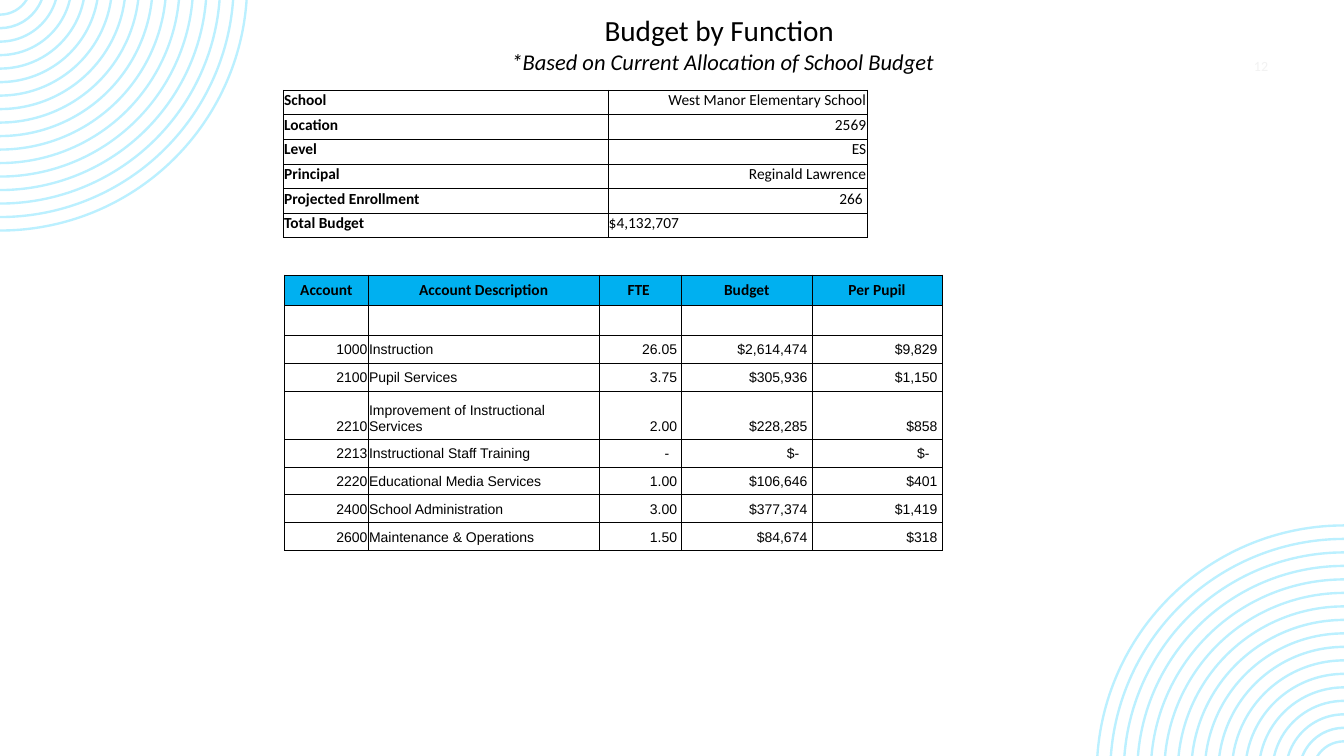
import math

from lxml import etree
from pptx import Presentation
from pptx import util as u
from pptx.dml.color import RGBColor
from pptx.enum import text
from pptx.oxml import ns

BLACK = RGBColor(0x00, 0x00, 0x00)
HEADER_BLUE = RGBColor(0x00, 0xB0, 0xF0)
RING_BLUE = RGBColor(0xBB, 0xF0, 0xFF)
PALE_GREY = RGBColor(0xF2, 0xF2, 0xF2)

SLIDE_W, SLIDE_H = 33.87, 19.05
RINGS_W, RINGS_H = 6.25, 5.84
NO_STYLE = "{2D5ABB26-0587-4C30-8999-92F81FD0307C}"
LEFT, CENTER, RIGHT = text.PP_ALIGN.LEFT, text.PP_ALIGN.CENTER, text.PP_ALIGN.RIGHT
TOP, MIDDLE, BOTTOM = (text.MSO_ANCHOR.TOP, text.MSO_ANCHOR.MIDDLE,
                       text.MSO_ANCHOR.BOTTOM)

SCHOOL_FACTS = [
    ("School", "West Manor Elementary School"),
    ("Location", "2569"),
    ("Level", "ES"),
    ("Principal", "Reginald Lawrence"),
    ("Projected Enrollment", "266 "),
    ("Total Budget", "$4,132,707"),
]
BUDGET_HEADINGS = ("Account", "Account Description", "FTE ", "Budget", "Per Pupil")
BUDGET_LINES = [
    ("1000", "Instruction", "26.05 ", "$2,614,474 ", "$9,829 "),
    ("2100", "Pupil Services", "3.75 ", "$305,936 ", "$1,150 "),
    ("2210", "Improvement of Instructional Services", "2.00 ", "$228,285 ", "$858 "),
    ("2213", "Instructional Staff Training", "- ", "$- ", "$- "),
    ("2220", "Educational Media Services", "1.00 ", "$106,646 ", "$401 "),
    ("2400", "School Administration", "3.00 ", "$377,374 ", "$1,419 "),
    ("2600", "Maintenance & Operations", "1.50 ", "$84,674 ", "$318 "),
]


def style(paragraph, size, font="Calibri", color=BLACK, bold=False, italic=False):
    for run in paragraph.runs:
        run.font.size, run.font.name = u.Pt(size), font
        run.font.bold, run.font.italic = bold, italic
        run.font.color.rgb = color


def add_point(path, kind, x, y):
    step = etree.SubElement(path, ns.qn("a:" + kind))
    etree.SubElement(step, ns.qn("a:pt"), x=str(u.Cm(x)), y=str(u.Cm(y)))


def add_arc(path, radius, start, sweep):
    etree.SubElement(path, ns.qn("a:arcTo"), wR=str(u.Cm(radius)), hR=str(u.Cm(radius)),
                     stAng=str(round(start * 60000)), swAng=str(round(sweep * 60000)))


def add_rings(slide, left, top, rotation):
    """Concentric bands, their centre just beyond the slide corner."""
    rise, outer_radius, spacing, band = 0.42, 6.26, 0.34, 0.06
    right, bottom = u.Cm(left + RINGS_W), u.Cm(top + RINGS_H)
    builder = slide.shapes.build_freeform(u.Cm(left), u.Cm(top))
    builder.add_line_segments([(right, u.Cm(top)), (right, bottom), (u.Cm(left), bottom)])
    rings = builder.convert_to_shape()
    rings.rotation = rotation
    rings.shadow.inherit = False
    rings.fill.solid()
    rings.fill.fore_color.rgb = RING_BLUE
    rings.line.fill.background()

    # True arcs take the place of the straight frame
    path = rings._element.find(".//" + ns.qn("a:path"))
    for segment in list(path):
        path.remove(segment)
    for ring in range(17):
        outer = outer_radius - ring * spacing
        inner = outer - band
        outer_angle, inner_angle = (math.degrees(math.asin(rise / radius))
                                    for radius in (outer, inner))
        add_point(path, "moveTo", math.sqrt(outer**2 - rise**2), 0)
        add_arc(path, outer, outer_angle, 90 - outer_angle)
        add_point(path, "lnTo", 0, inner - rise)
        add_arc(path, inner, 90, inner_angle - 90)
        etree.SubElement(path, ns.qn("a:close"))


def add_text(slide, box, lines, bottom=0.13):
    """Each line is (wording, size, colour, italic)."""
    frame = slide.shapes.add_textbox(*map(u.Cm, box)).text_frame
    frame.word_wrap = True
    frame.vertical_anchor = MIDDLE
    frame.margin_bottom = u.Cm(bottom)
    frame.text = "\n".join(line[0] for line in lines)
    for paragraph, (_, size, color, italic) in zip(frame.paragraphs, lines):
        paragraph.alignment = CENTER
        style(paragraph, size, color=color, italic=italic)


def add_grid(slide, left, top, widths, heights):
    """Unstyled table whose empty cells stay small."""
    frame = slide.shapes.add_table(len(heights), len(widths), u.Cm(left), u.Cm(top),
                                   u.Cm(sum(widths)), u.Cm(sum(heights)))
    grid = frame.table
    grid.first_row = grid.horz_banding = False
    frame._element.find(".//" + ns.qn("a:tableStyleId")).text = NO_STYLE
    for column, width in zip(grid.columns, widths):
        column.width = u.Cm(width)
    for row, height in zip(grid.rows, heights):
        row.height = u.Cm(height)
    for cell in grid.iter_cells():
        cell.margin_left = cell.margin_right = cell.margin_top = u.Cm(0.02)
        cell.margin_bottom = u.Cm(0.13)
        cell.fill.background()
        paragraph = cell.text_frame.paragraphs[0]._p
        etree.SubElement(paragraph, ns.qn("a:endParaRPr"), sz="1000")
    return grid


def border(cell):
    properties = cell._tc.get_or_add_tcPr()
    for position, side in enumerate(("lnL", "lnR", "lnT", "lnB")):
        line = etree.Element(ns.qn("a:" + side), w=str(u.Pt(0.5)))
        fill = etree.SubElement(line, ns.qn("a:solidFill"))
        etree.SubElement(fill, ns.qn("a:srgbClr"), val=str(BLACK))
        properties.insert(position, line)


def write(cell, wording, align, anchor, size, font="Calibri", bold=False):
    cell.text = wording
    cell.vertical_anchor = anchor
    paragraph = cell.text_frame.paragraphs[0]
    paragraph.alignment = align
    style(paragraph, size, font, bold=bold)


def add_school_table(slide):
    # The first row and the last column are empty and unruled
    grid = add_grid(slide, 7.14, 1.65, (8.18, 6.53, 1.63), [0.62] * 7)
    for r, (label, value) in enumerate(SCHOOL_FACTS, start=1):
        align = LEFT if label == "Total Budget" else RIGHT
        write(grid.cell(r, 0), label, LEFT, TOP, 11, bold=True)
        write(grid.cell(r, 1), value, align, BOTTOM, 11)
        for c in range(2):
            border(grid.cell(r, c))


def add_budget_table(slide):
    # The last row and the last column are empty and unruled
    heights = [0.76, 0.76, 0.7, 0.7, 1.22, 0.7, 0.7, 0.7, 0.7, 0.76]
    grid = add_grid(slide, 7.17, 6.93, (2.11, 5.82, 2.08, 3.28, 3.28, 1.52), heights)
    for r in range(9):
        for c in range(5):
            border(grid.cell(r, c))
    for c, heading in enumerate(BUDGET_HEADINGS):
        cell = grid.cell(0, c)
        write(cell, heading, CENTER, BOTTOM, 11, bold=True)
        cell.fill.solid()
        cell.fill.fore_color.rgb = HEADER_BLUE
    for r, line in enumerate(BUDGET_LINES, start=2):
        for c, value in enumerate(line):
            cell = grid.cell(r, c)
            write(cell, value, LEFT if c == 1 else RIGHT, BOTTOM, 10, "Arial")
            if value.endswith("- "):
                cell.margin_right = u.Cm(0.22)


def main():
    deck = Presentation()
    deck.slide_width, deck.slide_height = u.Cm(SLIDE_W), u.Cm(SLIDE_H)
    slide = deck.slides.add_slide(deck.slide_layouts[6])

    # Corner decoration
    add_rings(slide, 0, 0, 0)
    add_rings(slide, SLIDE_W - RINGS_W, SLIDE_H - RINGS_H, 180)

    # Title and page number
    add_text(slide, (6.78, 0.71, 22.86, 1.68), [
        ("Budget by Function ", 20.9, BLACK, False),
        ("*Based on Current Allocation of School Budget", 16.1, BLACK, True),
    ], bottom=1.03)
    add_text(slide, (30.78, 1.16, 2, 1), [("12", 10, PALE_GREY, False)])

    # Tables
    add_school_table(slide)
    add_budget_table(slide)

    deck.save("out.pptx")


if __name__ == "__main__":
    main()
